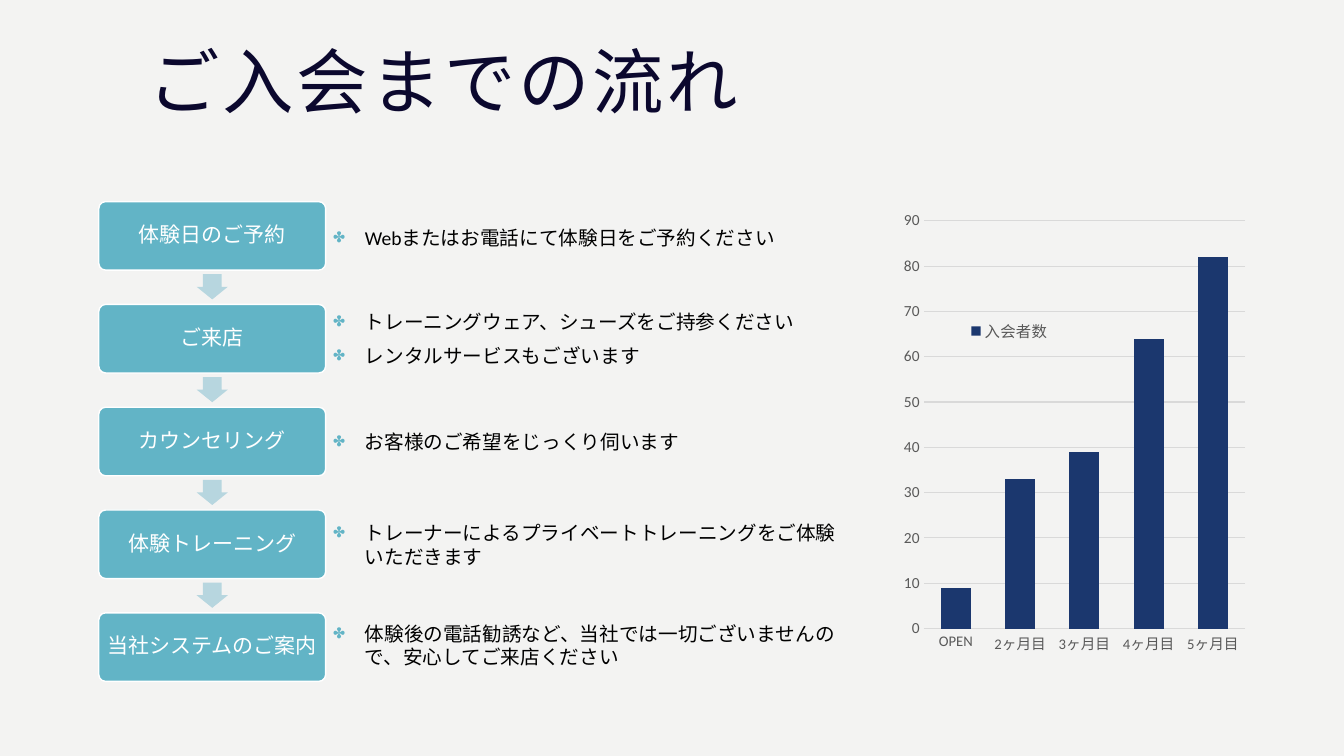
from dataclasses import dataclass

from lxml import etree
from pptx import Presentation
from pptx import util as u
from pptx.chart.data import CategoryChartData
from pptx.dml.color import RGBColor
from pptx.enum import chart as charts
from pptx.enum import shapes, text
from pptx.oxml import parse_xml
from pptx.oxml.ns import nsdecls, qn


@dataclass(frozen=True)
class Theme:
    background: str = "F3F3F2"
    title: str = "0B082E"
    step: str = "62B4C6"
    arrow: str = "B7D6DF"
    white: str = "FFFFFF"
    body: str = "000000"
    bar: str = "1B376E"
    axis_text: str = "595959"
    grid: str = "D9D9D9"
    title_font: str = "Arial Narrow"
    body_font: str = "Calibri"
    title_size: float = 51
    step_size: float = 15
    note_size: float = 14
    chart_size: float = 11
    category_size: float = 10.5


@dataclass(frozen=True)
class Step:
    label: str
    notes: tuple[str, ...]
    note_top: float
    note_height: float
    note_width: float = 5.29


THEME = Theme()
STEPS = (
    Step("体験日のご予約", ("Webまたはお電話にて体験日をご予約ください",), 2.19, 0.34, 5.11),
    Step("ご来店", ("トレーニングウェア、シューズをご持参ください",
                 "レンタルサービスもございます"), 3.03, 0.67),
    Step("カウンセリング", ("お客様のご希望をじっくり伺います",), 4.22, 0.34),
    Step("体験トレーニング",
         ("トレーナーによるプライベートトレーニングをご体験いただきます",), 5.12, 0.57),
    Step("当社システムのご案内",
         ("体験後の電話勧誘など、当社では一切ございませんので、安心してご来店ください",), 6.12, 0.57),
)
MEMBERS = {"OPEN": 9, "2ヶ月目": 33, "3ヶ月目": 39, "4ヶ月目": 64, "5ヶ月目": 82}
STEP_LEFT, STEP_TOP, STEP_WIDTH, STEP_HEIGHT, STEP_PITCH = 0.98, 2, 2.25, 0.68, 1.02
ARROW_LENGTH, ARROW_BREADTH = 0.25, 0.31


def box(left: float, top: float, width: float, height: float) -> tuple:
    return tuple(u.Inches(value) for value in (left, top, width, height))


def style_font(font, size: float, color: str, name: str = THEME.body_font) -> None:
    font.size = u.Pt(size)
    font.name = name
    font.color.rgb = RGBColor.from_string(color)


def fill_solid(fill, color: str) -> None:
    fill.solid()
    fill.fore_color.rgb = RGBColor.from_string(color)


def style_line(line, color: str, width: float) -> None:
    fill_solid(line.fill, color)
    line.width = u.Pt(width)


def add_title(slide) -> None:
    shape = slide.shapes.add_textbox(*box(1.37, 0.42, 11.13, 1.63))
    frame = shape.text_frame
    frame.word_wrap = True
    frame.text = "ご入会までの流れ"
    paragraph = frame.paragraphs[0]
    paragraph.line_spacing = 0.9
    font = paragraph.runs[0].font
    style_font(font, THEME.title_size, THEME.title, THEME.title_font)
    paragraph.runs[0]._r.get_or_add_rPr().set("spc", "200")


def add_step_box(slide, label: str, top: float) -> None:
    shape = slide.shapes.add_shape(shapes.MSO_SHAPE.ROUNDED_RECTANGLE,
                                   *box(STEP_LEFT, top, STEP_WIDTH, STEP_HEIGHT))
    shape.shadow.inherit = False
    shape.adjustments[0] = 0.1
    fill_solid(shape.fill, THEME.step)
    style_line(shape.line, THEME.white, 1)
    frame = shape.text_frame
    frame.word_wrap = True
    frame.vertical_anchor = text.MSO_ANCHOR.MIDDLE
    frame.margin_left = frame.margin_right = u.Inches(0.06)
    frame.margin_top = frame.margin_bottom = u.Inches(0.06)
    frame.text = label
    paragraph = frame.paragraphs[0]
    paragraph.alignment = text.PP_ALIGN.CENTER
    paragraph.line_spacing = 0.9
    style_font(paragraph.runs[0].font, THEME.step_size, THEME.white)


def add_step_arrow(slide, step_top: float) -> None:
    left = STEP_LEFT + (STEP_WIDTH - ARROW_LENGTH) / 2
    shape = slide.shapes.add_shape(shapes.MSO_SHAPE.RIGHT_ARROW,
                                   *box(left, step_top + 0.69, ARROW_LENGTH, ARROW_BREADTH))
    shape.rotation = 90
    shape.shadow.inherit = False
    shape.adjustments[0] = 0.6
    shape.adjustments[1] = 0.5
    fill_solid(shape.fill, THEME.arrow)
    shape.line.fill.background()


def add_bullet(paragraph) -> None:
    properties = paragraph._p.get_or_add_pPr()
    indent = u.Inches(0.31)
    properties.set("marL", str(indent))
    properties.set("indent", str(-indent))
    color = etree.SubElement(properties, qn("a:buClr"))
    etree.SubElement(color, qn("a:srgbClr"), val=THEME.step)
    etree.SubElement(properties, qn("a:buChar"), char="✤")


def add_notes(slide, step: Step) -> None:
    shape = slide.shapes.add_textbox(
        *box(3.21, step.note_top, step.note_width, step.note_height))
    frame = shape.text_frame
    frame.word_wrap = True
    frame.auto_size = text.MSO_AUTO_SIZE.SHAPE_TO_FIT_TEXT
    frame.text = "\n".join(step.notes)
    for index, paragraph in enumerate(frame.paragraphs):
        add_bullet(paragraph)
        if index:
            paragraph.space_before = u.Pt(7)
        style_font(paragraph.runs[0].font, THEME.note_size, THEME.body)


def set_layout(element, x: float, y: float, width: float, height: float,
               inner: bool = False) -> None:
    """Place a chart part by fractions of the chart area."""
    for old in element.findall(qn("c:layout")):
        element.remove(old)
    target = '<c:layoutTarget val="inner"/>' if inner else ""
    layout = parse_xml(
        f'<c:layout {nsdecls("c")}><c:manualLayout>{target}'
        '<c:xMode val="edge"/><c:yMode val="edge"/>'
        f'<c:x val="{x}"/><c:y val="{y}"/><c:w val="{width}"/><c:h val="{height}"/>'
        '</c:manualLayout></c:layout>')
    position = element.find(qn("c:legendPos"))
    if position is None:
        element.insert(0, layout)
    else:
        position.addnext(layout)


def add_member_chart(slide) -> None:
    data = CategoryChartData()
    data.categories = list(MEMBERS)
    data.add_series("入会者数", list(MEMBERS.values()))
    chart = slide.shapes.add_chart(charts.XL_CHART_TYPE.COLUMN_CLUSTERED,
                                   *box(8.88, 2, 3.54, 4.76), data).chart
    style_font(chart.font, THEME.chart_size, THEME.body)
    chart.has_title = False
    plot = chart.plots[0]
    plot.vary_by_categories = False
    plot.gap_width = 114
    plot.overlap = -27
    fill_solid(plot.series[0].format.fill, THEME.bar)

    for axis, size in ((chart.category_axis, THEME.category_size),
                       (chart.value_axis, THEME.chart_size)):
        axis.major_tick_mark = axis.minor_tick_mark = charts.XL_TICK_MARK.NONE
        style_font(axis.tick_labels.font, size, THEME.axis_text)
    style_line(chart.category_axis.format.line, THEME.grid, 0.75)
    values = chart.value_axis
    values.minimum_scale, values.maximum_scale, values.major_unit = 0, 90, 10
    values.format.line.fill.background()
    style_line(values.major_gridlines.format.line, THEME.grid, 0.75)

    chart.has_legend = True
    legend = chart.legend
    legend.position = charts.XL_LEGEND_POSITION.BOTTOM
    legend.include_in_layout = False
    style_font(legend.font, THEME.chart_size, THEME.axis_text)
    set_layout(legend._element, 0.18, 0.24, 0.28, 0.06)
    set_layout(chart._chartSpace.chart.plotArea, 0.08, 0.04, 0.9, 0.85, inner=True)


def main() -> None:
    presentation = Presentation()
    presentation.slide_width = u.Inches(13.33)
    presentation.slide_height = u.Inches(7.5)
    slide = presentation.slides.add_slide(presentation.slide_layouts[6])
    fill_solid(slide.background.fill, THEME.background)
    add_title(slide)
    for index, step in enumerate(STEPS):
        top = STEP_TOP + index * STEP_PITCH
        add_step_box(slide, step.label, top)
        if index < len(STEPS) - 1:
            add_step_arrow(slide, top)
        add_notes(slide, step)
    add_member_chart(slide)
    presentation.save("out.pptx")


if __name__ == "__main__":
    main()
